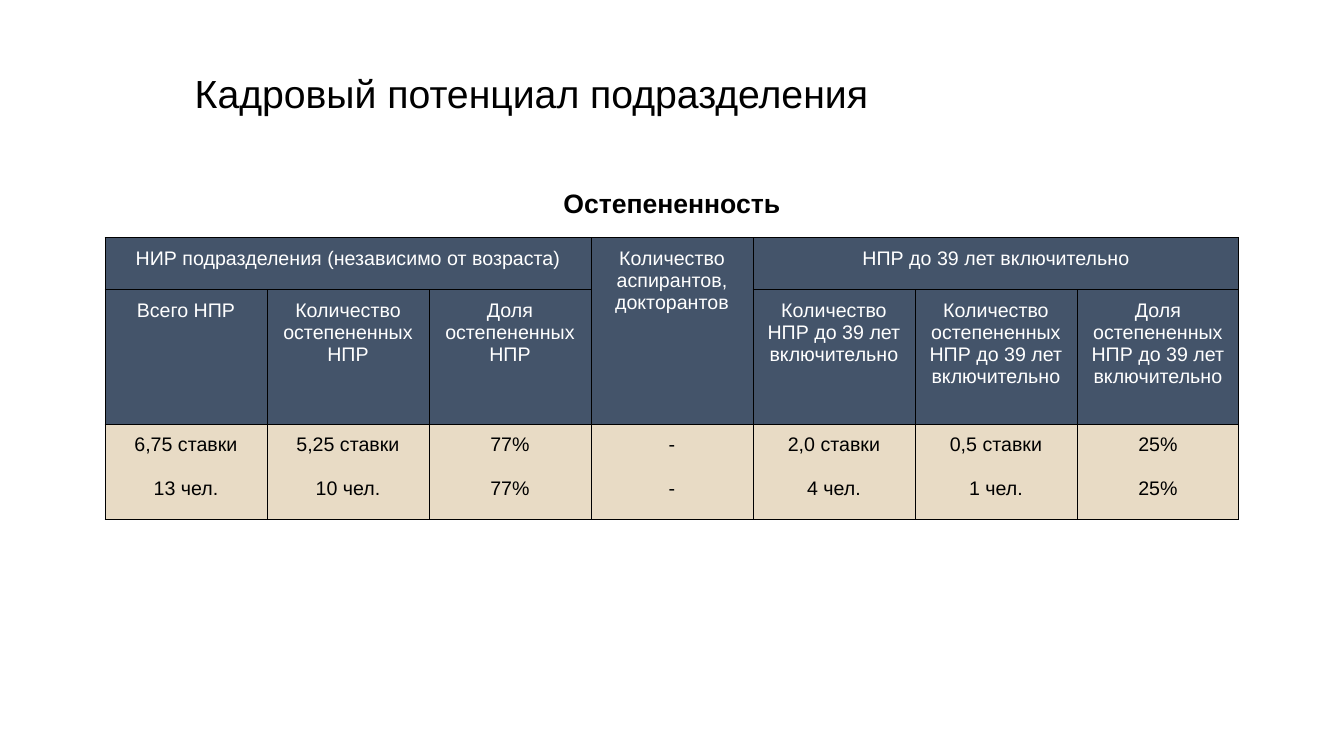
from lxml.etree import SubElement
from pptx import Presentation
from pptx.dml.color import RGBColor as Rgb
from pptx.enum.text import MSO_AUTO_SIZE as AutoSize, PP_ALIGN as Align
from pptx.oxml.ns import qn
from pptx.util import Pt

# Content
TITLE = "Кадровый потенциал подразделения"
SUBTITLE = "Остепененность"
# (row, column, rows spanned, columns spanned, text)
GROUPS = [
    (0, 0, 1, 3, "НИР подразделения (независимо от возраста)"),
    (0, 3, 2, 1, "Количество аспирантов, докторантов"),
    (0, 4, 1, 3, "НПР до 39 лет включительно"),
]
HEADINGS = {
    0: "Всего НПР",
    1: "Количество остепененных НПР",
    2: "Доля остепененных НПР",
    4: "Количество НПР до 39 лет включительно",
    5: "Количество остепененных НПР до 39 лет включительно",
    6: "Доля остепененных НПР до 39 лет включительно",
}
STAFF = [
    ("6,75 ставки", "13 чел."),
    ("5,25 ставки", "10 чел."),
    ("77%", "77%"),
    ("-", "-"),
    ("2,0 ставки", "4 чел."),
    ("0,5 ставки", "1 чел."),
    ("25%", "25%"),
]

# Look
COLORS = {"text": "000000", "header": "44546A", "header_text": "FFFFFF",
          "body": "E8DBC5", "border": "000000"}
FONT = "Arial"
PADDING = 7.2
LINE_GAP = 15.7
TABLE_LEFT, TABLE_TOP, TABLE_WIDTH = 75, 169.9, 810
ROW_HEIGHTS = [37, 96, 68]


def style(paragraph, size, color, bold=False, align=Align.CENTER):
    paragraph.alignment = align
    for run in paragraph.runs:
        run.font.name = FONT
        run.font.size = Pt(size)
        run.font.bold = bold
        run.font.color.rgb = Rgb.from_string(color)


def add_label(slide, box, text, size, pad_y, bold, align):
    frame = slide.shapes.add_textbox(*map(Pt, box)).text_frame
    frame.word_wrap = True
    frame.auto_size = AutoSize.SHAPE_TO_FIT_TEXT
    frame.margin_left = frame.margin_right = Pt(PADDING)
    frame.margin_top = frame.margin_bottom = Pt(pad_y)
    frame.text = text
    style(frame.paragraphs[0], size, COLORS["text"], bold, align)


def add_borders(cell):
    properties = cell._tc.get_or_add_tcPr()
    for side in ("lnL", "lnR", "lnT", "lnB"):
        line = SubElement(properties, qn(f"a:{side}"), w=str(Pt(0.75)))
        fill = SubElement(line, qn("a:solidFill"))
        SubElement(fill, qn("a:srgbClr"), val=COLORS["border"])


def fill_cell(cell, lines, color):
    cell.text_frame.text = "\n".join(lines)
    for paragraph in cell.text_frame.paragraphs:
        style(paragraph, 14, color)
    for paragraph in cell.text_frame.paragraphs[1:]:
        paragraph.space_before = Pt(LINE_GAP)


def add_staff_table(slide):
    table = slide.shapes.add_table(
        len(ROW_HEIGHTS), len(STAFF), Pt(TABLE_LEFT), Pt(TABLE_TOP),
        Pt(TABLE_WIDTH), Pt(sum(ROW_HEIGHTS))).table
    table.first_row = table.horz_banding = False
    for column in table.columns:
        column.width = Pt(TABLE_WIDTH / len(STAFF))
    for row, height in zip(table.rows, ROW_HEIGHTS):
        row.height = Pt(height)

    # Borders, padding and fills
    for row_index, row in enumerate(table.rows):
        for cell in row.cells:
            add_borders(cell)
            cell.margin_left = cell.margin_right = Pt(PADDING)
            cell.margin_top = cell.margin_bottom = Pt(PADDING)
            cell.fill.solid()
            cell.fill.fore_color.rgb = Rgb.from_string(
                COLORS["header" if row_index < 2 else "body"])

    # Header rows
    for row, column, height, width, text in GROUPS:
        cell = table.cell(row, column)
        cell.merge(table.cell(row + height - 1, column + width - 1))
        fill_cell(cell, [text], COLORS["header_text"])
    for column, text in HEADINGS.items():
        fill_cell(table.cell(1, column), [text], COLORS["header_text"])

    # Staff figures
    for column, figures in enumerate(STAFF):
        fill_cell(table.cell(2, column), figures, COLORS["text"])


def main():
    deck = Presentation()
    deck.slide_width, deck.slide_height = Pt(960), Pt(540)
    slide = deck.slides.add_slide(deck.slide_layouts[6])
    add_label(slide, (132, 46, 569.5, 41), TITLE, 28, 3.6, False, Align.LEFT)
    add_staff_table(slide)
    add_label(slide, (323.3, 126, 313.2, 37.4), SUBTITLE, 19, PADDING, True,
              Align.CENTER)
    deck.save("out.pptx")


if __name__ == "__main__":
    main()
